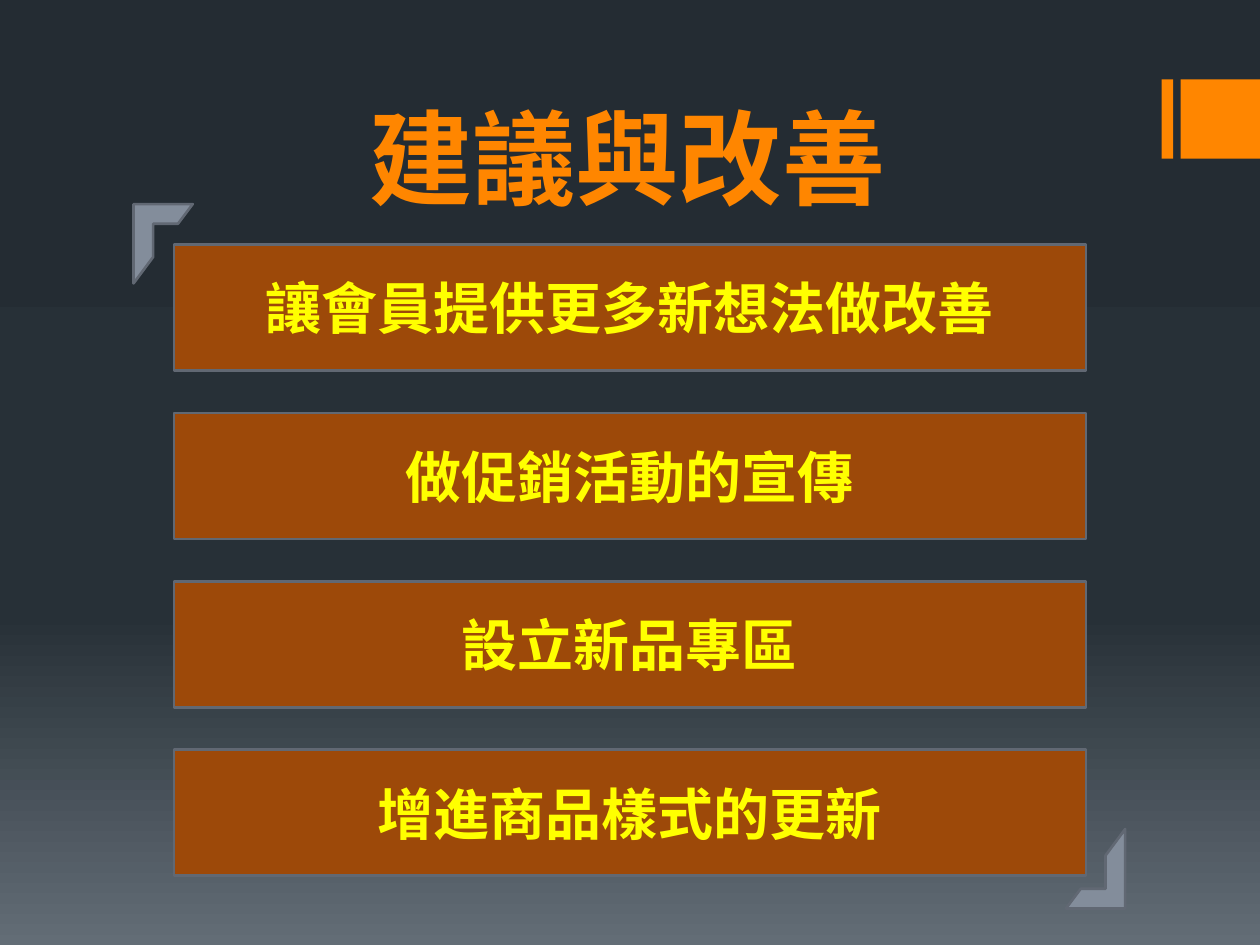
from copy import deepcopy

from lxml import etree
from pptx import Presentation
from pptx import util as u
from pptx.dml.color import RGBColor
from pptx.enum import shapes, text
from pptx.oxml.ns import qn

TITLE = "建議與改善"
SUGGESTIONS = [
    "讓會員提供更多新想法做改善",
    "做促銷活動的宣傳",
    "設立新品專區",
    "增進商品樣式的更新",
]
FONT = "Noto Sans CJK JP"
COLORS = {
    "accent": "FF8600",
    "bar": "9D4909",
    "corner": "838D9B",
    "outline": "616873",
    "bar_text": "FFFF00",
}
BACKGROUND_STOPS = [(0, "242C33"), (0.65, "273037"), (1, "636D76")]
TAB_LEFT_WIDTH = [(9.22, 0.09), (9.37, 0.63)]
BAR_LEFT, BAR_TOP, BAR_WIDTH, BAR_HEIGHT, BAR_PITCH = 1.38, 1.94, 7.24, 1, 1.337
CORNERS = [(1.06, 1.62, 0), (8.46, 6.58, 180)]


def rgb(name):
    return RGBColor.from_string(COLORS[name])


def paint_background(slide):
    fill = slide.background.fill
    fill.gradient()
    fill.gradient_angle = 270
    stop_list = slide.element.find(".//" + qn("a:gsLst"))
    stop_list.append(deepcopy(stop_list[-1]))
    for stop, (position, color) in zip(fill.gradient_stops, BACKGROUND_STOPS):
        stop.position = position
        stop.color.rgb = RGBColor.from_string(color)


def add_block(slide, kind, box, fill, outline=None):
    shape = slide.shapes.add_shape(kind, *map(u.Inches, box))
    shape.shadow.inherit = False
    shape.fill.solid()
    shape.fill.fore_color.rgb = rgb(fill)
    if outline:
        shape.line.color.rgb = rgb(outline)
        shape.line.width = u.Pt(1.5)
    else:
        shape.line.fill.background()
    return shape


def write_text(shape, words, size, color, anchor):
    frame = shape.text_frame
    frame.word_wrap = True
    frame.vertical_anchor = anchor
    paragraph = frame.paragraphs[0]
    paragraph.alignment = text.PP_ALIGN.CENTER
    run = paragraph.add_run()
    run.text = words
    for name, value in {"name": FONT, "size": u.Pt(size), "bold": True}.items():
        setattr(run.font, name, value)
    run.font.color.rgb = rgb(color)
    properties = run._r.get_or_add_rPr()
    etree.SubElement(properties, qn("a:ea"), typeface=FONT)


def main():
    presentation = Presentation()
    presentation.slide_width = u.Inches(10)
    presentation.slide_height = u.Inches(7.5)
    slide = presentation.slides.add_slide(presentation.slide_layouts[6])
    paint_background(slide)

    rectangle = shapes.MSO_SHAPE.RECTANGLE
    for left, width in TAB_LEFT_WIDTH:
        add_block(slide, rectangle, (left, 0.63, width, 0.63), "accent")

    title = slide.shapes.add_textbox(*map(u.Inches, (0.98, 0.52, 8, 1.26)))
    write_text(title, TITLE, 59, "accent", text.MSO_ANCHOR.BOTTOM)

    for index, suggestion in enumerate(SUGGESTIONS):
        box = (BAR_LEFT, BAR_TOP + index * BAR_PITCH, BAR_WIDTH, BAR_HEIGHT)
        bar = add_block(slide, rectangle, box, "bar", "outline")
        write_text(bar, suggestion, 32, "bar_text", text.MSO_ANCHOR.MIDDLE)

    for left, top, rotation in CORNERS:
        corner = add_block(slide, shapes.MSO_SHAPE.HALF_FRAME,
                           (left, top, 0.47, 0.63), "corner", "outline")
        corner.rotation = rotation

    presentation.save("out.pptx")


if __name__ == "__main__":
    main()
